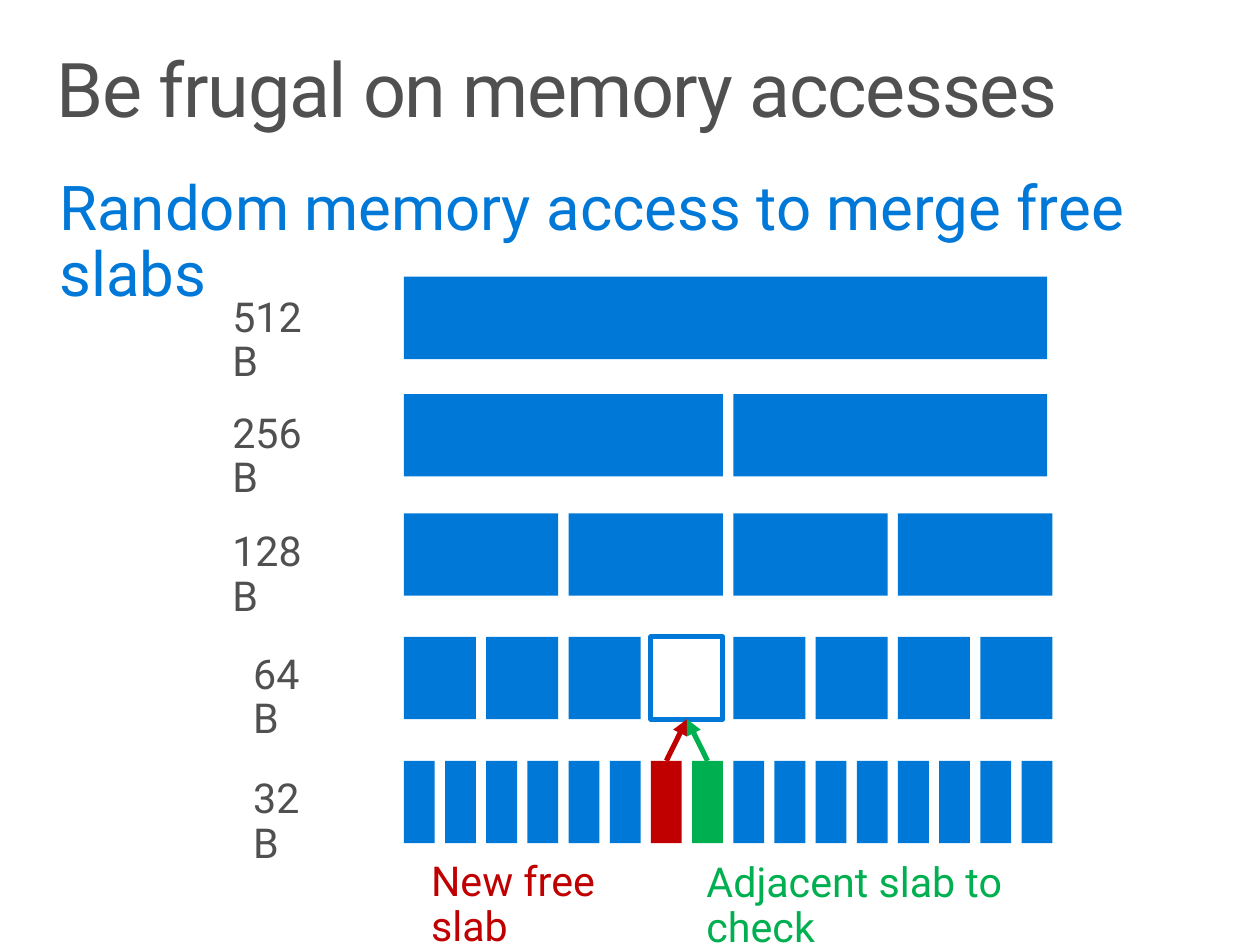
from dataclasses import dataclass

from lxml import etree
from pptx import Presentation
from pptx.dml.color import RGBColor
from pptx.enum.shapes import MSO_CONNECTOR, MSO_SHAPE
from pptx.enum.text import MSO_ANCHOR, MSO_AUTO_SIZE, PP_ALIGN
from pptx.oxml.ns import qn
from pptx.util import Pt

RECT = MSO_SHAPE.RECTANGLE
STRAIGHT = MSO_CONNECTOR.STRAIGHT
TOP = MSO_ANCHOR.TOP
LEFT = PP_ALIGN.LEFT
FIXED = MSO_AUTO_SIZE.NONE
GROW = MSO_AUTO_SIZE.SHAPE_TO_FIT_TEXT

COLORS = {
    "blue": "0078D7",
    "gray": "505050",
    "red": "C00000",
    "green": "00B050",
    "white": "FFFFFF",
}
FONT = "Roboto"
SLABS_LEFT = 235.4
SLAB_HEIGHT = 48
UNIT = 24
GAP = 6
UNITS_PER_ROW = 16
TOP_SIDE, BOTTOM_SIDE = 0, 2


@dataclass
class SlabRow:
    size: int
    top: float
    label_top: float
    label_left: float
    label_width: float
    trim: float = 0


@dataclass
class Caption:
    text: str
    left: float
    top: float
    width: float
    color: str


ROWS = [
    SlabRow(512, 161.3, 161.3, 121, 82, trim=3),
    SlabRow(256, 229.7, 229, 121, 82, trim=3),
    SlabRow(128, 299.2, 298.1, 121, 82),
    SlabRow(64, 371.2, 369.4, 133.2, 69.1),
    SlabRow(32, 443.5, 442.1, 133.2, 69.1),
]
CAPTIONS = [
    Caption("New free slab", 236.9, 490.3, 174.2, "red"),
    Caption("Adjacent slab to check", 397.4, 491, 269.3, "green"),
]
MERGED = (64, 3)
NEW_FREE = (32, 6)
ADJACENT = (32, 7)
SLAB_COLORS = {MERGED: "white", NEW_FREE: "red", ADJACENT: "green"}


def rgb(color: str) -> RGBColor:
    return RGBColor.from_string(COLORS[color])


def place(sp, left: float, top: float, width: float, height: float) -> None:
    sp.left, sp.top, sp.width, sp.height = Pt(left), Pt(top), Pt(width), Pt(height)


def write(sp, text: str, *, size: float, color: str, inset_x: float, inset_y: float,
          after: float = 0, tracking: float = 0, auto_size=GROW) -> None:
    tf = sp.text_frame
    tf.word_wrap = True
    tf.auto_size = auto_size
    tf.vertical_anchor = TOP
    tf.margin_left = tf.margin_right = Pt(inset_x)
    tf.margin_top = tf.margin_bottom = Pt(inset_y)
    p = tf.paragraphs[0]
    pPr = p._p.get_or_add_pPr()
    pPr.set("marL", "0")
    pPr.set("indent", "0")
    etree.SubElement(pPr, qn("a:buNone"))
    p.alignment = LEFT
    p.line_spacing = 0.9
    p.space_before = Pt(0)
    p.space_after = Pt(after)
    r = p.add_run()
    r.text = text
    r.font.name = FONT
    r.font.size = Pt(size)
    r.font.color.rgb = rgb(color)
    if tracking:
        r._r.get_or_add_rPr().set("spc", str(round(tracking * 100)))


def add_label(s, text: str, left: float, top: float, width: float, color: str) -> None:
    sp = s.shapes.add_textbox(Pt(left), Pt(top), Pt(width), Pt(49.7))
    write(sp, text, size=24, color=color, inset_x=14.4, inset_y=11.5, after=6)


def add_slab(s, left: float, top: float, width: float, color: str):
    sp = s.shapes.add_shape(RECT, Pt(left), Pt(top), Pt(width), Pt(SLAB_HEIGHT))
    sp.shadow.inherit = False
    sp.fill.solid()
    sp.fill.fore_color.rgb = rgb(color)
    if color == "white":
        sp.line.color.rgb = rgb("blue")
        sp.line.width = Pt(3)
    else:
        sp.line.fill.background()
    return sp


def add_row(s, row: SlabRow) -> dict:
    add_label(s, f"{row.size}B", row.label_left, row.label_top, row.label_width, "gray")
    units = row.size // 32
    count = UNITS_PER_ROW // units
    slabs = {}
    for i in range(count):
        width = units * UNIT - GAP - (row.trim if i == count - 1 else 0)
        key = (row.size, i)
        slabs[key] = add_slab(s, SLABS_LEFT + i * units * UNIT, row.top, width,
                              SLAB_COLORS.get(key, "blue"))
    return slabs


def add_arrow(s, source, target, color: str) -> None:
    line = s.shapes.add_connector(STRAIGHT, 0, 0, 0, 0)
    line.begin_connect(source, TOP_SIDE)
    line.end_connect(target, BOTTOM_SIDE)
    line.line.color.rgb = rgb(color)
    line.line.width = Pt(3)
    spPr = line._element.spPr
    etree.SubElement(spPr.find(qn("a:ln")), qn("a:tailEnd"), type="triangle")
    etree.SubElement(spPr, qn("a:effectLst"))


def main() -> None:
    prs = Presentation()
    prs.slide_width, prs.slide_height = Pt(734.4), Pt(550.8)
    s = prs.slides.add_slide(prs.slide_layouts[1])

    title, body = s.shapes.title, s.placeholders[1]
    place(title, 21.6, 23, 691.2, 72)
    write(title, "Be frugal on memory accesses", size=44, color="gray",
          inset_x=11.5, inset_y=7.2, tracking=-0.8, auto_size=FIXED)
    place(body, 21.6, 95.8, 699.8, 92.9)
    write(body, "Random memory access to merge free slabs", size=36, color="blue",
          inset_x=13, inset_y=7.2)

    slabs = {}
    for row in ROWS:
        slabs.update(add_row(s, row))
    for c in CAPTIONS:
        add_label(s, c.text, c.left, c.top, c.width, c.color)
    for key in (NEW_FREE, ADJACENT):
        add_arrow(s, slabs[key], slabs[MERGED], SLAB_COLORS[key])

    prs.save("out.pptx")


if __name__ == "__main__":
    main()
